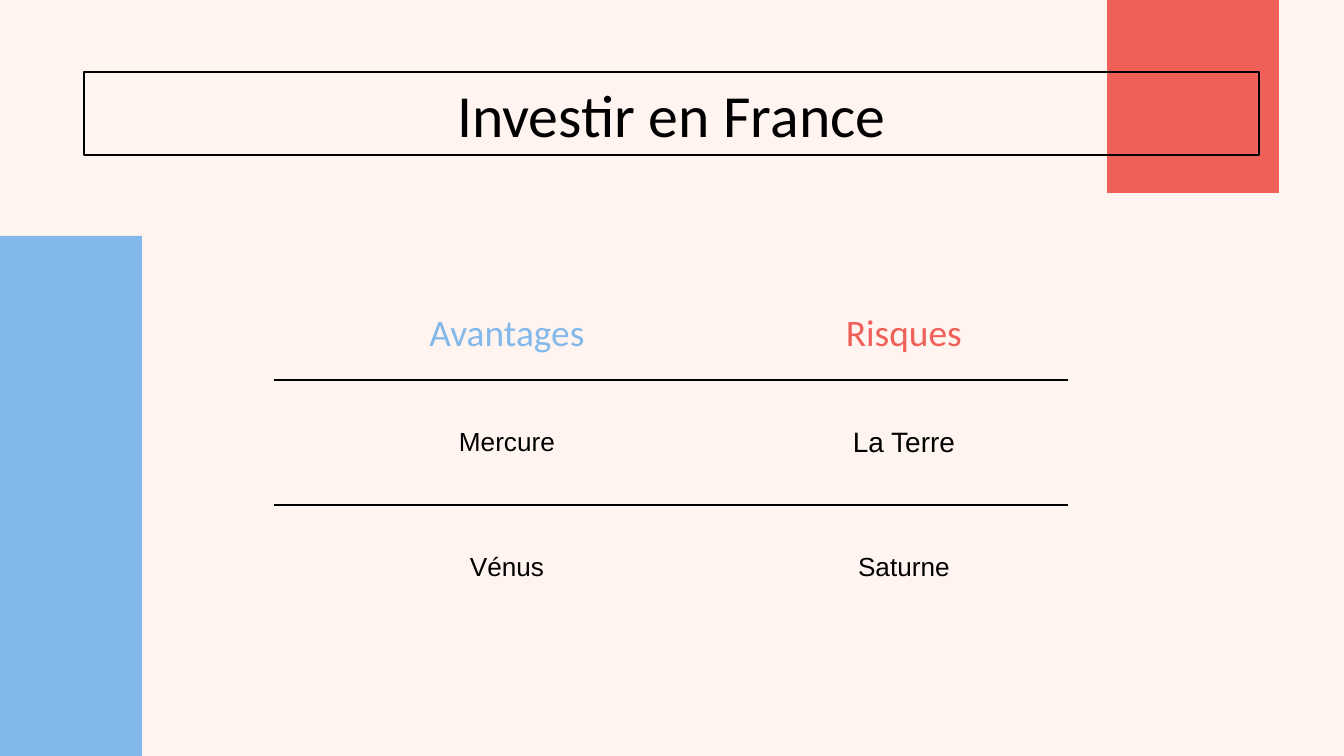
"""Build a slide that compares the advantages and risks of investing in France."""
from pptx import Presentation
from pptx.dml.color import RGBColor
from pptx.enum.shapes import MSO_SHAPE as Shape
from pptx.enum.text import MSO_ANCHOR as Anchor, MSO_AUTO_SIZE as AutoSize, PP_ALIGN as Align
from pptx.oxml import parse_xml
from pptx.oxml.ns import nsdecls
from pptx.util import Emu, Pt

WIDTH, HEIGHT = 1344, 756
SCALE = 914400 / 134.4
INSET = 13
RULE = 1.5

CREAM = RGBColor(0xFF, 0xF4, 0xEF)
BLUE = RGBColor(0x83, 0xB9, 0xEA)
RED = RGBColor(0xEF, 0x60, 0x58)
BLACK = RGBColor(0x00, 0x00, 0x00)

COLUMNS = (466, 328)
ROWS = (93, 125, 125)
HEADINGS = (("Avantages", BLUE), ("Risques", RED))
PLANETS = ((("Mercure", 14), ("La Terre", 15)), (("Vénus", 14), ("Saturne", 14)))


def px(length):
    return Emu(round(length * SCALE))


def write(frame, text, *, size, color=BLACK, font="Arial", align=Align.CENTER):
    para = frame.paragraphs[0]
    para.alignment = align
    span = para.add_run()
    span.text = text
    span.font.name = font
    span.font.size = Pt(size)
    span.font.bold = False
    span.font.color.rgb = color


def set_insets(holder):
    for side in ("left", "top", "right", "bottom"):
        setattr(holder, f"margin_{side}", px(INSET))
    holder.vertical_anchor = Anchor.MIDDLE


def add_block(page, left, top, width, height, color):
    block = page.shapes.add_shape(Shape.RECTANGLE, px(left), px(top), px(width), px(height))
    block.shadow.inherit = False
    block.fill.solid()
    block.fill.fore_color.rgb = color
    block.line.fill.background()


def place_title(page, text):
    title = page.shapes.title
    page.shapes._spTree.append(title._element)
    title.left, title.top, title.width, title.height = map(px, (84, 72, 1175, 83))
    title.line.color.rgb = BLACK
    title.line.width = Pt(RULE)
    frame = title.text_frame
    frame.word_wrap = True
    frame.auto_size = AutoSize.NONE
    set_insets(frame)
    write(frame, text, size=32, font="Calibri")


def set_borders(cell, ruled):
    properties = cell._tc.get_or_add_tcPr()
    for index, side in enumerate("LRTB"):
        if side in ruled:
            width, paint = Pt(RULE), f'<a:solidFill><a:srgbClr val="{BLACK}"/></a:solidFill>'
        else:
            width, paint = 0, "<a:noFill/>"
        border = parse_xml(f'<a:ln{side} {nsdecls("a")} w="{width}">{paint}</a:ln{side}>')
        properties.insert(index, border)


def format_cell(cell, text, ruled, **style):
    set_insets(cell)
    cell.fill.background()
    set_borders(cell, ruled)
    write(cell.text_frame, text, **style)


def add_comparison(page, left, top):
    frame = page.shapes.add_table(
        len(ROWS), len(COLUMNS), px(left), px(top), px(sum(COLUMNS)), px(sum(ROWS)))
    table = frame.table
    table.first_row = table.horz_banding = False
    for column, width in zip(table.columns, COLUMNS):
        column.width = px(width)
    for row, height in zip(table.rows, ROWS):
        row.height = px(height)
    for column, (text, color) in enumerate(HEADINGS):
        format_cell(table.cell(0, column), text, "B", size=20, color=color, font="Calibri")
    for row, planets in enumerate(PLANETS, start=1):
        ruled = "TB" if row < len(PLANETS) else "T"
        for column, (text, size) in enumerate(planets):
            format_cell(table.cell(row, column), text, ruled, size=size)


def main():
    deck = Presentation()
    deck.slide_width, deck.slide_height = px(WIDTH), px(HEIGHT)
    page = deck.slides.add_slide(deck.slide_layouts.get_by_name("Title Only"))
    page.background.fill.solid()
    page.background.fill.fore_color.rgb = CREAM
    add_block(page, 0, 236, 142, HEIGHT - 236, BLUE)
    add_block(page, 1107, 0, 172, 193, RED)
    place_title(page, "Investir en France")
    add_comparison(page, 274, 287)
    deck.save("out.pptx")


if __name__ == "__main__":
    main()
